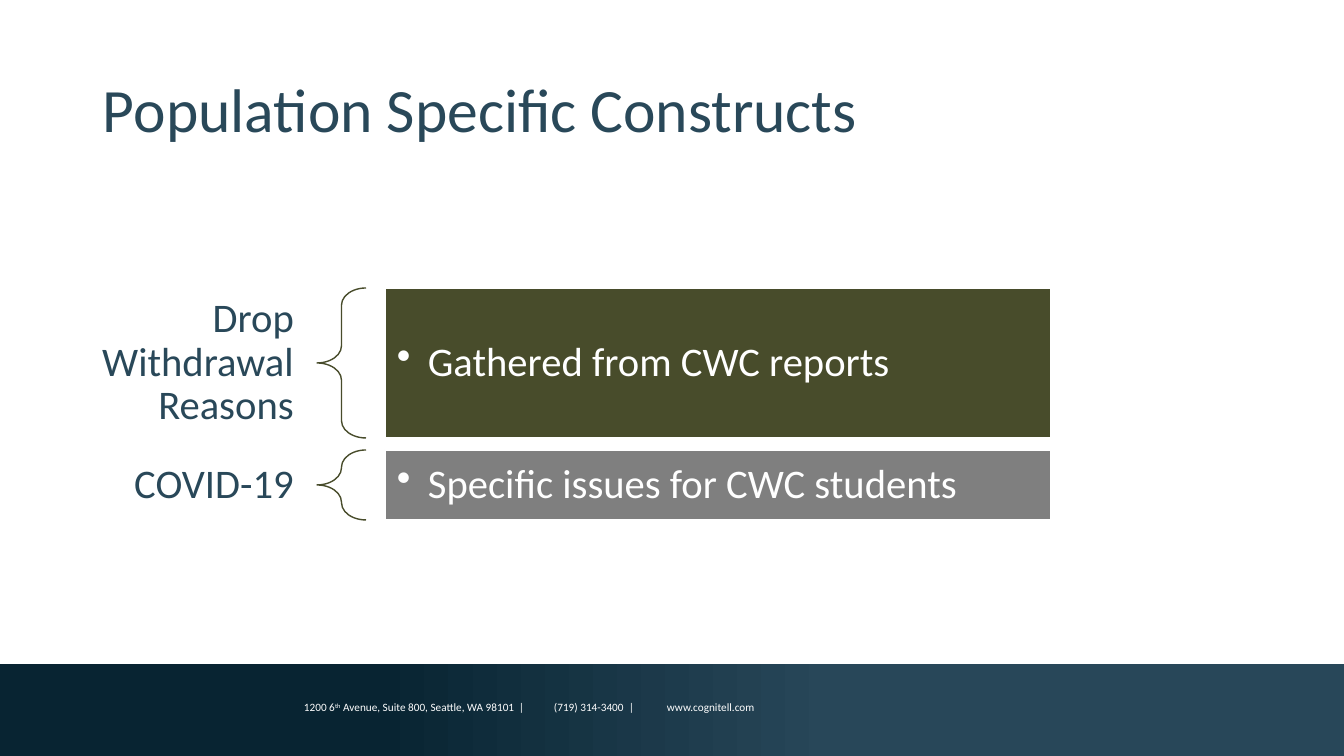
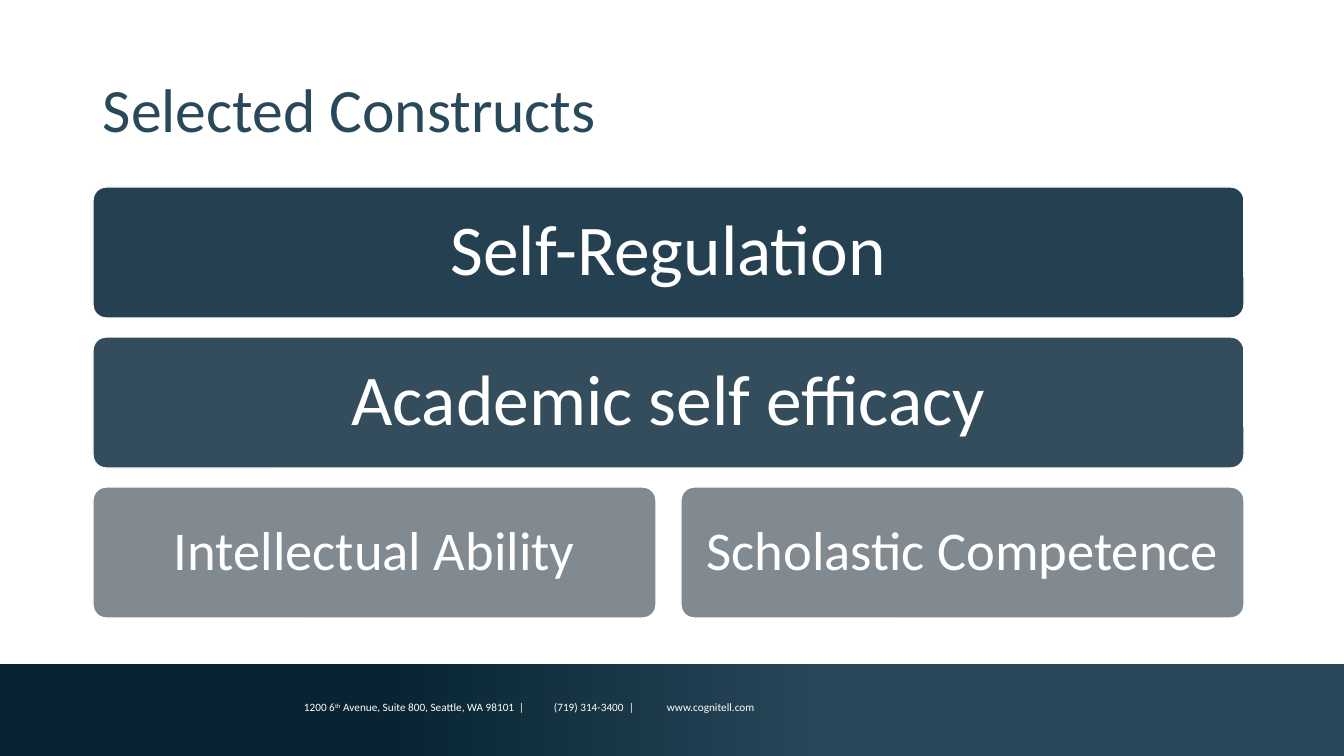
import dataclasses
import typing

import lxml.etree
import pptx
import pptx.dml.color
import pptx.enum.shapes
import pptx.enum.text
import pptx.oxml.ns
import pptx.util

FONT = "Calibri"
WHITE, NAVY, OLIVE, GREY = "FFFFFF", "294859", "484C2B", "7F7F7F"
WIDE, TALL = 1344, 756
KIND = pptx.enum.shapes.MSO_SHAPE
ALIGN = pptx.enum.text.PP_ALIGN


@dataclasses.dataclass
class Row:
    label: str
    note: str
    top: int
    high: int
    fill: str


@dataclasses.dataclass
class Tile:
    text: str
    row: int
    col: int
    span: int
    fill: str
    size: int
    inset: int


ROWS = [
    Row("Drop Withdrawal Reasons", "Gathered from CWC reports", 288, 150, OLIVE),
    Row("COVID-19", "Specific issues for CWC students", 450, 70, GREY),
]
TILES = [
    Tile("Self-Regulation", 0, 0, 2, "254151", 51, 21),
    Tile("Academic self efficacy", 1, 0, 2, "334D5D", 51, 21),
    Tile("Intellectual Ability", 2, 0, 1, "828A91", 39, 16),
    Tile("Scholastic Competence", 2, 1, 1, "828A91", 39, 16),
]
FOOT = [
    ("1200 6", False),
    ("th", True),
    (" Avenue, Suite 800, Seattle, WA 98101\t|\t(719) 314-3400\t|\twww.cognitell.com", False),
]
STOPS = [215, 250, 325, 363]


def px(n: float) -> int:
    return pptx.util.Emu(round(n * 914400 / 100.8))


def rgb(code: str) -> pptx.dml.color.RGBColor:
    return pptx.dml.color.RGBColor.from_string(code)


def node(parent: typing.Any, tag: str, **attrs: typing.Any) -> typing.Any:
    """Append a drawing element with the given attributes."""
    names = {key: str(val) for key, val in attrs.items()}
    return lxml.etree.SubElement(parent, pptx.oxml.ns.qn(tag), names)


def shape(slide: typing.Any, kind: typing.Any, box: tuple[int, int, int, int],
          fill: str = "", line: str = "") -> typing.Any:
    item = slide.shapes.add_shape(kind, *map(px, box))
    item.shadow.inherit = False
    if fill:
        item.fill.solid()
        item.fill.fore_color.rgb = rgb(fill)
    else:
        item.fill.background()
    if line:
        item.line.color.rgb = rgb(line)
        item.line.width = pptx.util.Pt(1)
    else:
        item.line.fill.background()
    return item


def frame(item: typing.Any, side: int, edge: int) -> typing.Any:
    """Centre the text vertically, set its insets and return its paragraph."""
    body = item.text_frame
    body.word_wrap = True
    body.vertical_anchor = pptx.enum.text.MSO_ANCHOR.MIDDLE
    body.margin_left = body.margin_right = px(side)
    body.margin_top = body.margin_bottom = px(edge)
    return body.paragraphs[0]


def style(para: typing.Any, size: int, color: str,
          align: typing.Any = ALIGN.LEFT, space: float = 0.9) -> None:
    para.alignment = align
    para.line_spacing = space
    para.font.name = FONT
    para.font.size = pptx.util.Pt(size)
    para.font.color.rgb = rgb(color)


def label(slide: typing.Any, text: str, box: tuple[int, int, int, int],
          size: int, side: int, edge: int, align: typing.Any) -> None:
    para = frame(slide.shapes.add_textbox(*map(px, box)), side, edge)
    para.text = text
    style(para, size, NAVY, align)


def footer(slide: typing.Any) -> None:
    band = shape(slide, KIND.RECTANGLE, (0, 664, WIDE, TALL - 664))
    band.fill.gradient()
    band.fill.gradient_angle = 0
    for stop, (pos, color) in zip(band.fill.gradient_stops,
                                  [(0.28, "082432"), (0.62, "284759")]):
        stop.position = pos
        stop.color.rgb = rgb(color)
    para = frame(slide.shapes.add_textbox(*map(px, (294, 687, 502, 40))), 10, 5)
    for text, high in FOOT:
        run = para.add_run()
        run.text = text
        if high:
            run.font._element.set("baseline", "30000")
    tabs = node(para._p.get_or_add_pPr(), "a:tabLst")
    for pos in STOPS:
        node(tabs, "a:tab", pos=px(pos), algn="l")
    style(para, 8, WHITE, space=1.0)


def start(deck: typing.Any, title: str) -> typing.Any:
    """Add a blank slide with the shared footer and title."""
    slide = deck.slides.add_slide(deck.slide_layouts[6])
    footer(slide)
    label(slide, title, (93, 40, 1159, 146), 44, 10, 5, ALIGN.LEFT)
    return slide


def brace(slide: typing.Any, row: Row) -> None:
    label(slide, row.label, (73, row.top, 244, row.high), 29, 23, 8, ALIGN.RIGHT)
    curve = shape(slide, KIND.LEFT_BRACE, (317, row.top, 49, row.high), line=OLIVE)
    curve.adjustments[0] = 0.35
    block = shape(slide, KIND.RECTANGLE, (385, row.top, 666, row.high), row.fill, WHITE)
    para = frame(block, 12, 12)
    para.text = row.note
    props = para._p.get_or_add_pPr()
    props.set("marL", str(px(31)))
    props.set("indent", str(px(-31)))
    node(props, "a:buChar", char="•")
    style(para, 29, WHITE)


def tile(slide: typing.Any, cell: Tile) -> None:
    wide, high, gap = 563, 131, 25
    box = (93 + cell.col * (wide + gap), 187 + cell.row * 150,
           cell.span * (wide + gap) - gap, high)
    block = shape(slide, KIND.ROUNDED_RECTANGLE, box, cell.fill, WHITE)
    block.adjustments[0] = 0.1
    para = frame(block, cell.inset, cell.inset)
    para.text = cell.text
    style(para, cell.size, WHITE, ALIGN.CENTER)


def main() -> None:
    deck = pptx.Presentation()
    deck.slide_width, deck.slide_height = px(WIDE), px(TALL)
    slide = start(deck, "Population Specific Constructs")
    for row in ROWS:
        brace(slide, row)
    slide = start(deck, "Selected Constructs")
    for cell in TILES:
        tile(slide, cell)
    deck.save("out.pptx")


if __name__ == "__main__":
    main()
